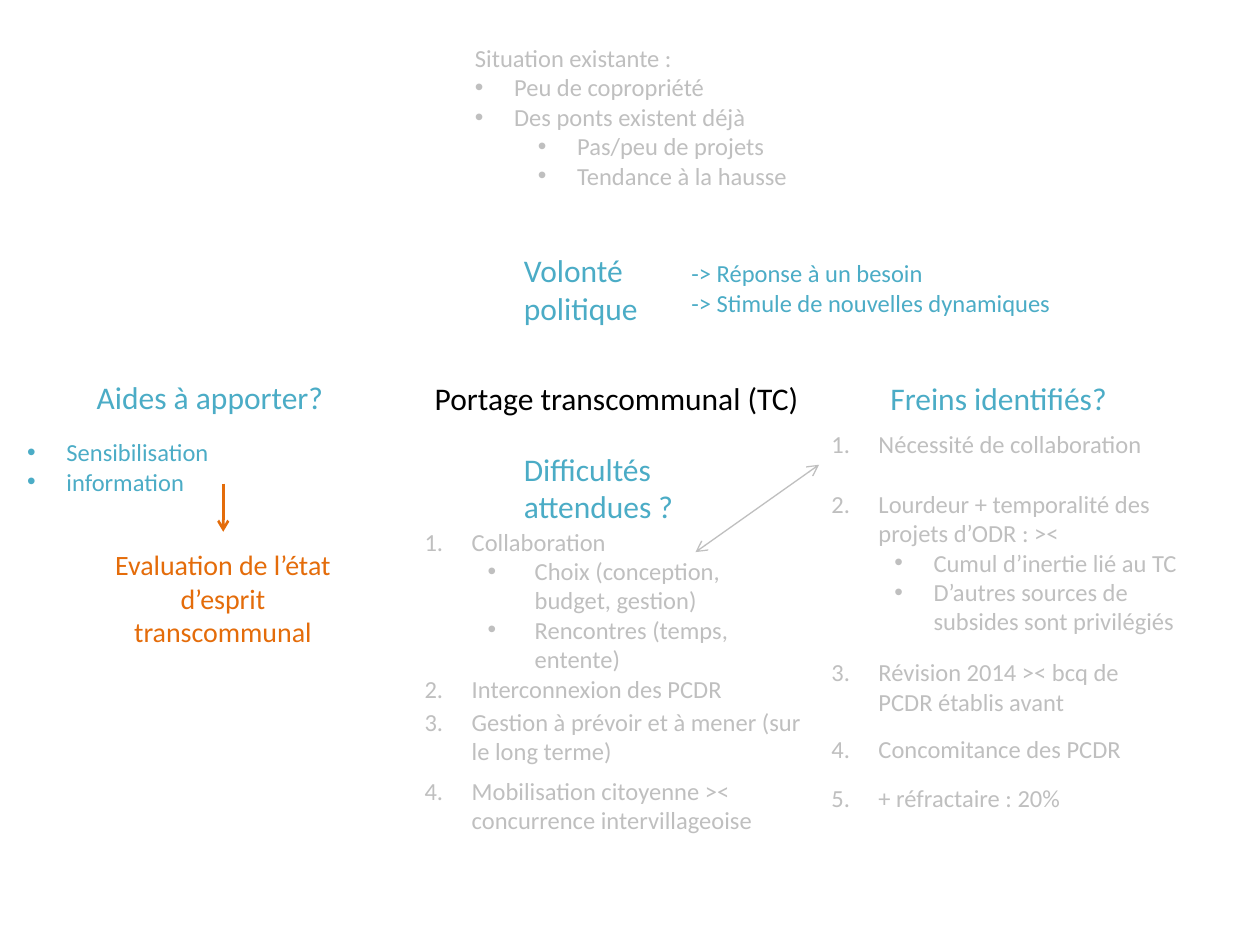
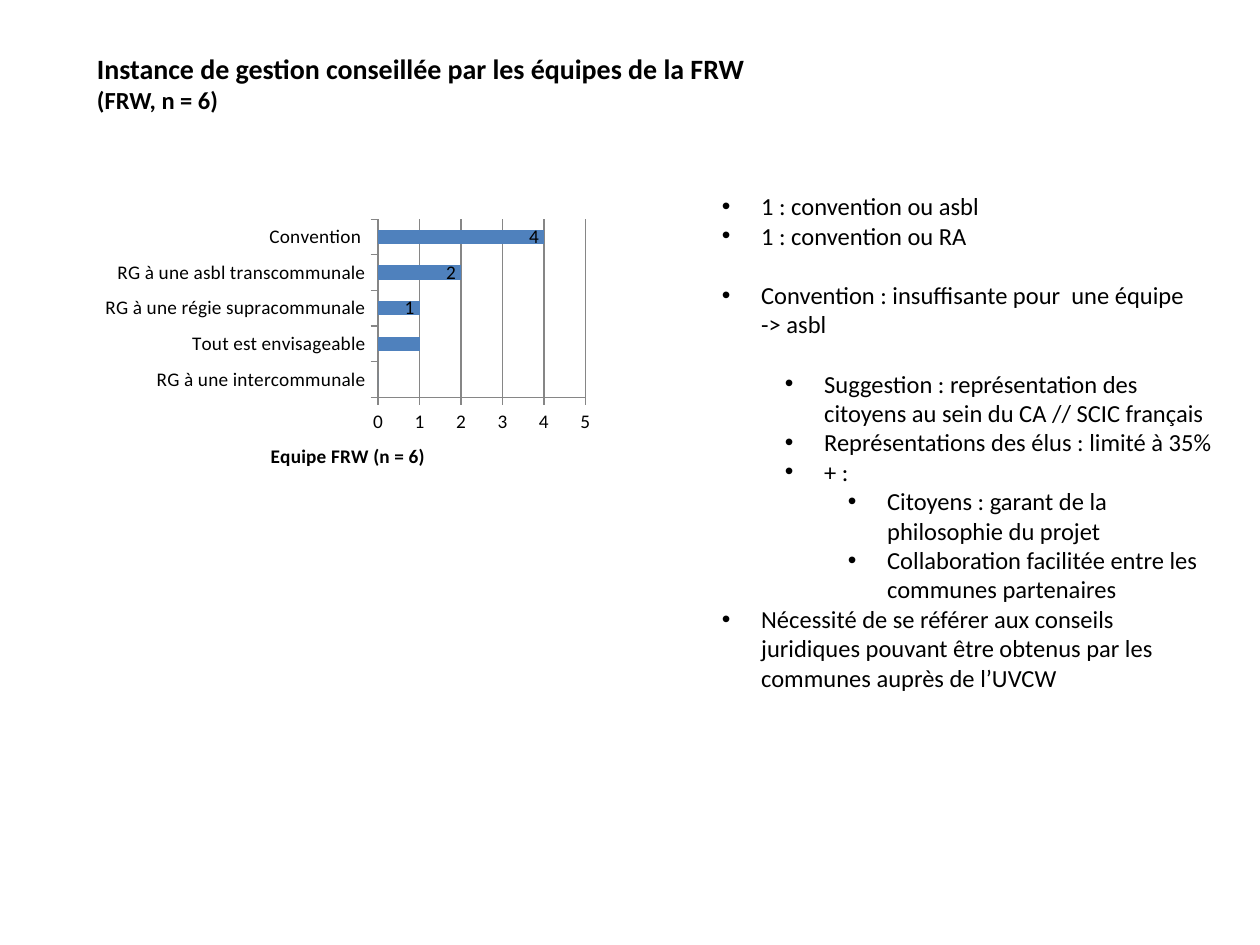
from lxml.etree import SubElement
from pptx import Presentation
from pptx.chart.data import CategoryChartData
from pptx.dml.color import RGBColor
from pptx.enum.chart import XL_CHART_TYPE, XL_LABEL_POSITION, XL_TICK_MARK
from pptx.enum.shapes import MSO_CONNECTOR
from pptx.enum.text import MSO_ANCHOR, MSO_AUTO_SIZE, PP_ALIGN
from pptx.oxml import parse_xml
from pptx.oxml.ns import nsdecls, qn
from pptx.util import Cm, Pt

BLACK = RGBColor(0x00, 0x00, 0x00)
TEAL = RGBColor(0x4B, 0xAC, 0xC6)
SILVER = RGBColor(0xBF, 0xBF, 0xBF)
ORANGE = RGBColor(0xE4, 0x6C, 0x0A)
BLUE = RGBColor(0x4F, 0x81, 0xBD)
GREY = RGBColor(0x86, 0x86, 0x86)
FONT = "Calibri"
HEADING, CALLOUT, TEXT, CHART_TEXT = 18, 16, 14, 11
BULLET = "•"
LEVEL_STEP, BULLET_HANG, NUMBER_HANG = 1.27, 0.79, 0.95
LINE_GAP = 17

TOPIC = "Portage transcommunal (TC)"
TOPIC_BOX = (8.51, 7.52, 8, 1.02)

SITUATION = [
    {"text": "Situation existante :"},
    {"text": "Peu de copropriété", "mark": BULLET},
    {"text": "Des ponts existent déjà", "mark": BULLET},
    {"text": "Pas/peu de projets", "mark": BULLET, "level": 1},
    {"text": "Tendance à la hausse", "mark": BULLET, "level": 1},
]
SITUATION_BOX = (9.32, 0.74, 9.37, 3.84)

QUESTIONS = [
    ("Volonté politique", (10.31, 4.93, 4.6, 1.8)),
    ("Freins identifiés?", (17.7, 7.52, 6.6, 1.02)),
    ("Difficultés attendues ?", (10.31, 8.94, 4.19, 1.8)),
    ("Aides à apporter?", (1.7, 7.49, 5.59, 1.02)),
]
ANSWERS = [
    ([{"text": "-> Réponse à un besoin"},
      {"text": "-> Stimule de nouvelles dynamiques"}], (13.69, 5.08, 9.37, 2.06)),
    ([{"text": "Sensibilisation", "mark": BULLET},
      {"text": "information", "mark": BULLET}], (0.3, 8.69, 8.61, 1.45)),
]
EVALUATION = "Evaluation de l’état d’esprit transcommunal"
EVALUATION_BOX = (1.7, 10.92, 5.59, 2.31)

DIFFICULTIES = [
    ("Collaboration",
     ["Choix (conception, budget, gestion)", "Rencontres (temps, entente)"],
     (8.31, 10.49, 7.19, 3.84)),
    ("Interconnexion des PCDR", [], (8.31, 13.46, 7.19, 0.86)),
    ("Gestion à prévoir et à mener (sur le long terme)", [], (8.31, 14.12, 8.15, 1.45)),
    ("Mobilisation citoyenne >< concurrence intervillageoise", [],
     (8.31, 15.52, 7.19, 1.45)),
]
OBSTACLES = [
    ("Nécessité de collaboration", [], (16.51, 8.53, 7.19, 0.86)),
    ("Lourdeur + temporalité des projets d’ODR : ><",
     ["Cumul d’inertie lié au TC", "D’autres sources de subsides sont privilégiés"],
     (16.51, 9.73, 7.8, 3.25)),
    ("Révision 2014 >< bcq de PCDR établis avant", [], (16.51, 13.13, 7.19, 1.45)),
    ("Concomitance des PCDR", [], (16.51, 14.68, 7.19, 0.86)),
    ("+ réfractaire : 20%", [], (16.51, 15.67, 7.19, 0.86)),
]
NUMBERED_COLUMNS = [(DIFFICULTIES, NUMBER_HANG), (OBSTACLES, BULLET_HANG)]

ARROWS = [
    ((14.02, 11.13, 16.51, 9.37), SILVER, 0.75, ("headEnd", "tailEnd")),
    ((4.5, 9.75, 4.5, 10.72), ORANGE, 1.5, ("tailEnd",)),
]

MANAGEMENT = [
    {"text": "Instance de gestion conseillée par les équipes de la FRW", "size": CALLOUT},
    {"text": "(FRW, n = 6)"},
]
MANAGEMENT_BOX = (1.7, 0.91, 22.61, 1.55)
REMARKS = [
    {"text": "1 : convention ou asbl"},
    {"text": "1 : convention ou RA"},
    {"text": "Convention : insuffisante pour  une équipe  -> asbl", "gap": LINE_GAP},
    {"text": "Suggestion : représentation des citoyens au sein du CA // SCIC français",
     "level": 1, "gap": LINE_GAP},
    {"text": "Représentations des élus : limité à 35%", "level": 1},
    {"text": "+ :", "level": 1},
    {"text": "Citoyens : garant de la philosophie du projet", "level": 2},
    {"text": "Collaboration facilitée entre les communes partenaires", "level": 2},
    {"text": "Nécessité de se référer aux conseils juridiques pouvant être obtenus "
             "par les communes auprès de l’UVCW"},
]
REMARKS_BOX = (14.3, 3.73, 10.41, 10.44)
ADVICE = [
    ("RG à une intercommunale", 0),
    ("Tout est envisageable", 1),
    ("RG à une régie supracommunale", 1),
    ("RG à une asbl transcommunale", 2),
    ("Convention ", 4),
]
UNLABELLED = [0, 1]
ADVICE_AXIS = "Equipe FRW (n = 6)"
ADVICE_BOX = (0.89, 3.94, 11.61, 5.99)
PLOT = {"x": 0.58, "y": 0.08, "w": 0.36, "h": 0.6}


def lengths(box):
    return [Cm(value) for value in box]


def set_mark(paragraph, mark, level, hang):
    properties = paragraph._p.get_or_add_pPr()
    if mark is None:
        properties.set("marL", "0")
        properties.set("indent", "0")
        SubElement(properties, qn("a:buNone"))
        return
    properties.set("marL", str(Cm(level * LEVEL_STEP + hang)))
    properties.set("indent", str(-Cm(hang)))
    if mark == BULLET:
        SubElement(properties, qn("a:buFont"), typeface="Arial")
        SubElement(properties, qn("a:buChar"), char=BULLET)
    else:
        SubElement(properties, qn("a:buFont"), typeface="+mj-lt")
        SubElement(properties, qn("a:buAutoNum"), type="arabicPeriod", startAt=str(mark))


def write(holder, items, color, size=TEXT, bold=False, align=PP_ALIGN.LEFT):
    frame = holder.text_frame
    frame.word_wrap = True
    frame.auto_size = MSO_AUTO_SIZE.NONE
    frame.vertical_anchor = MSO_ANCHOR.TOP
    for index, item in enumerate(items):
        paragraph = frame.add_paragraph() if index else frame.paragraphs[0]
        paragraph.level = item.get("level", 0)
        paragraph.alignment = align
        paragraph.space_before = Pt(item.get("gap", 0))
        set_mark(paragraph, item.get("mark"), paragraph.level,
                 item.get("hang", BULLET_HANG))
        run = paragraph.add_run()
        run.text = item["text"]
        run.font.name = FONT
        run.font.size = Pt(item.get("size", size))
        run.font.bold = bold
        run.font.color.rgb = color


def place(holder, box):
    holder.left, holder.top, holder.width, holder.height = lengths(box)
    return holder


def add_text(shapes, box, items, color, **style):
    write(shapes.add_textbox(*lengths(box)), items, color, **style)


def add_numbered(slide, entries, detail_hang):
    column = slide.shapes.add_group_shape()
    for number, (text, details, box) in enumerate(entries, 1):
        items = [{"text": text, "mark": number, "hang": NUMBER_HANG}]
        items += [{"text": detail, "mark": BULLET, "level": 1, "hang": detail_hang}
                  for detail in details]
        add_text(column.shapes, box, items, SILVER)


def add_arrow(slide, ends, color, width, tips):
    arrow = slide.shapes.add_connector(MSO_CONNECTOR.STRAIGHT, *lengths(ends))
    arrow.line.color.rgb = color
    arrow.line.width = Pt(width)
    outline = arrow._element.spPr.find(qn("a:ln"))
    for tip in tips:
        SubElement(outline, qn("a:" + tip), type="arrow")
    SubElement(arrow._element.spPr, qn("a:effectLst"))


def add_advice_chart(slide):
    data = CategoryChartData()
    data.categories = [name for name, _ in ADVICE]
    data.add_series("Series 1", [count for _, count in ADVICE])
    chart = slide.shapes.add_chart(
        XL_CHART_TYPE.BAR_STACKED, *lengths(ADVICE_BOX), data).chart
    chart.has_legend = False
    chart.has_title = False
    chart.font.name = FONT
    chart.font.size = Pt(CHART_TEXT)
    chart.font.color.rgb = BLACK

    bars = chart.plots[0]
    bars.gap_width = 150
    bars.overlap = 100
    bars.vary_by_categories = False
    series = bars.series[0]
    series.format.fill.solid()
    series.format.fill.fore_color.rgb = BLUE
    labels = series.data_labels
    labels.show_value = True
    labels.position = XL_LABEL_POSITION.INSIDE_END
    for position, index in enumerate(UNLABELLED):
        labels._element.insert(position, parse_xml(
            f'<c:dLbl {nsdecls("c")}><c:idx val="{index}"/><c:delete val="1"/></c:dLbl>'))

    counts = chart.value_axis
    counts.minimum_scale, counts.maximum_scale, counts.major_unit = 0, 5, 1
    counts.has_major_gridlines = True
    counts.major_gridlines.format.line.color.rgb = GREY
    for axis in (chart.category_axis, counts):
        axis.major_tick_mark = XL_TICK_MARK.OUTSIDE
        axis.format.line.color.rgb = GREY
    caption = counts.axis_title.text_frame.paragraphs[0].add_run()
    caption.text = ADVICE_AXIS
    caption.font.name = FONT
    caption.font.size = Pt(CHART_TEXT)
    caption.font.bold = True
    caption.font.color.rgb = BLACK

    area = chart._chartSpace.chart.plotArea
    for layout in area.findall(qn("c:layout")):
        area.remove(layout)
    sizes = "".join(f'<c:{side} val="{share}"/>' for side, share in PLOT.items())
    area.insert(0, parse_xml(
        f'<c:layout {nsdecls("c")}><c:manualLayout><c:layoutTarget val="inner"/>'
        f'<c:xMode val="edge"/><c:yMode val="edge"/>{sizes}</c:manualLayout></c:layout>'))


def new_slide(deck, title_box, body_box):
    slide = deck.slides.add_slide(deck.slide_layouts[1])
    title = place(slide.shapes.title, title_box)
    body = place(slide.placeholders[1], body_box)
    return slide, title, body


def build_carrying(deck):
    slide, title, body = new_slide(deck, TOPIC_BOX, SITUATION_BOX)
    write(title, [{"text": TOPIC}], BLACK, size=HEADING)
    write(body, SITUATION, SILVER)
    for question, box in QUESTIONS:
        add_text(slide.shapes, box, [{"text": question}], TEAL, size=HEADING)
    for answer, box in ANSWERS:
        add_text(slide.shapes, box, answer, TEAL)
    add_text(slide.shapes, EVALUATION_BOX, [{"text": EVALUATION}], ORANGE,
             size=CALLOUT, align=PP_ALIGN.CENTER)
    for arrow in ARROWS:
        add_arrow(slide, *arrow)
    for entries, detail_hang in NUMBERED_COLUMNS:
        add_numbered(slide, entries, detail_hang)


def build_management(deck):
    slide, title, body = new_slide(deck, MANAGEMENT_BOX, REMARKS_BOX)
    write(title, MANAGEMENT, BLACK, bold=True)
    write(body, [{"mark": BULLET, **remark} for remark in REMARKS], BLACK)
    add_advice_chart(slide)


def main():
    deck = Presentation()
    deck.slide_width, deck.slide_height = Cm(25.4), Cm(19.05)
    build_carrying(deck)
    build_management(deck)
    deck.save("out.pptx")


if __name__ == "__main__":
    main()
